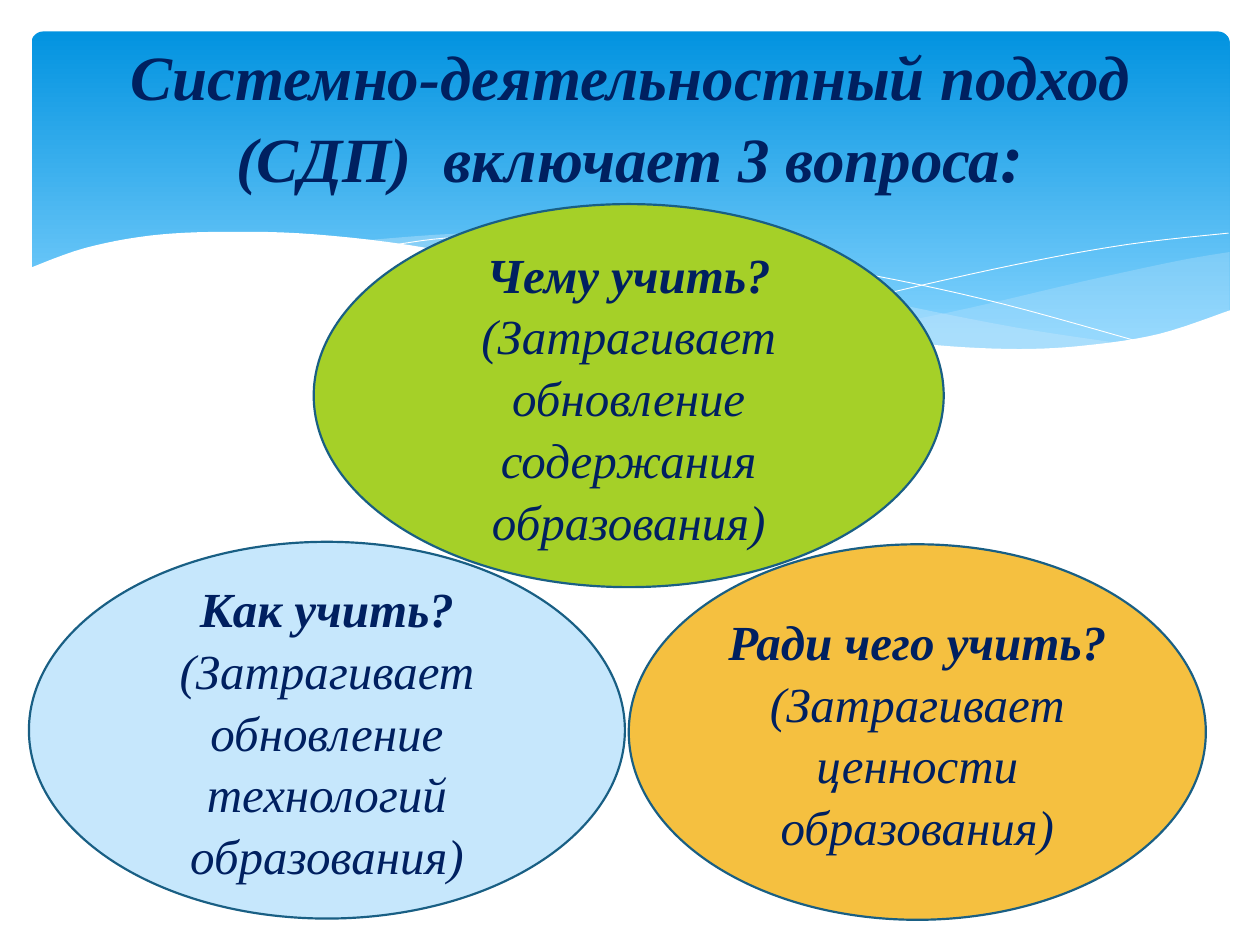
from dataclasses import dataclass

from lxml.etree import SubElement
from pptx import Presentation
from pptx.dml.color import RGBColor
from pptx.enum.shapes import MSO_SHAPE
from pptx.enum.text import MSO_ANCHOR, MSO_AUTO_SIZE, PP_ALIGN
from pptx.oxml.ns import qn
from pptx.util import Inches, Pt


@dataclass(frozen=True)
class Theme:
    font: str = "Times New Roman"
    ink: str = "002060"
    outline: str = "195F84"
    sky_top: str = "0293E0"
    sky_bottom: str = "83D3FE"
    mist: str = "C6E7FC"
    white: str = "FFFFFF"
    green: str = "A5D028"
    amber: str = "F5C040"
    title_size: float = 36
    colon_size: float = 39.6
    body_size: float = 28


def smooth(points, steps=6):
    """Sample a Catmull-Rom curve through the points."""
    padded = [points[0], *points, points[-1]]
    curve = [points[0]]
    for a, b, c, d in zip(padded, padded[1:], padded[2:], padded[3:]):
        for step in range(1, steps + 1):
            t = step / steps
            curve.append(tuple(
                0.5 * (2 * q + (r - p) * t + (2 * p - 5 * q + 4 * r - s) * t**2
                       + (3 * q - p - 3 * r + s) * t**3)
                for p, q, r, s in zip(a, b, c, d)))
    return curve


class SlideBuilder:
    def __init__(self, page, theme):
        self.page = page
        self.theme = theme

    def fill(self, shape, color, alpha=100):
        shape.fill.solid()
        shape.fill.fore_color.rgb = RGBColor.from_string(color)
        if alpha < 100:
            tint = shape.fill._xPr.find(qn("a:solidFill"))[0]
            SubElement(tint, qn("a:alpha"), val=str(alpha * 1000))

    def sky(self, left, top, width, height):
        shape = self.page.shapes.add_shape(
            MSO_SHAPE.ROUNDED_RECTANGLE,
            Inches(left), Inches(top), Inches(width), Inches(height))
        shape.adjustments[0] = 0.034
        shape.shadow.inherit = False
        shape.line.fill.background()
        shape.fill.gradient()
        shape.fill.gradient_angle = 270
        stops = ((0, self.theme.sky_top), (0.9, self.theme.sky_bottom))
        for stop, (position, color) in zip(shape.fill.gradient_stops, stops):
            stop.position = position
            stop.color.rgb = RGBColor.from_string(color)

    def outline(self, points, close):
        corners = [(Inches(x), Inches(y)) for x, y in points]
        builder = self.page.shapes.build_freeform(*corners[0])
        builder.add_line_segments(corners[1:], close=close)
        shape = builder.convert_to_shape()
        shape.shadow.inherit = False
        return shape

    def wave(self, points, color, alpha=100):
        shape = self.outline(points, close=True)
        self.fill(shape, color, alpha)
        shape.line.fill.background()

    def thread(self, points):
        shape = self.outline(smooth(points), close=False)
        shape.fill.background()
        shape.line.color.rgb = RGBColor.from_string(self.theme.white)
        shape.line.width = Pt(0.5)

    def style(self, font, size):
        font.name = self.theme.font
        font.size = Pt(size)
        font.italic = True
        font.color.rgb = RGBColor.from_string(self.theme.ink)

    def title(self, text, ending, left, top, width, height):
        box = self.page.shapes.title
        box.left, box.top = Inches(left), Inches(top)
        box.width, box.height = Inches(width), Inches(height)
        # Lift the title above the ellipses
        self.page.shapes._spTree.append(box._element)
        frame = box.text_frame
        frame.word_wrap = True
        frame.auto_size = MSO_AUTO_SIZE.NONE
        frame.vertical_anchor = MSO_ANCHOR.MIDDLE
        frame.margin_top, frame.margin_bottom = 0, Inches(0.6)
        para = frame.paragraphs[0]
        para.alignment = PP_ALIGN.CENTER
        self.style(para.font, self.theme.title_size)
        para.font.bold = True
        para.add_run().text = text
        span = para.add_run()
        span.text = ending
        span.font.size = Pt(self.theme.colon_size)

    def question(self, heading, detail, color, left, top, width, height):
        shape = self.page.shapes.add_shape(
            MSO_SHAPE.OVAL,
            Inches(left), Inches(top), Inches(width), Inches(height))
        shape.shadow.inherit = False
        self.fill(shape, color)
        shape.line.color.rgb = RGBColor.from_string(self.theme.outline)
        shape.line.width = Pt(1.25)
        frame = shape.text_frame
        frame.word_wrap = True
        frame.vertical_anchor = MSO_ANCHOR.MIDDLE
        para = frame.paragraphs[0]
        para.alignment = PP_ALIGN.CENTER
        para.line_spacing = 1.05
        self.style(para.font, self.theme.body_size)
        for text, bold in ((heading + " ", True), (detail, False)):
            span = para.add_run()
            span.text = text
            span.font.bold = bold


def main():
    deck = Presentation()
    deck.slide_width, deck.slide_height = Inches(10), Inches(7.5)
    theme = Theme()
    page = deck.slides.add_slide(deck.slide_layouts[5])
    slide = SlideBuilder(page, theme)

    # Sky with translucent waves
    slide.sky(0.25, 0.25, 9.51, 2.7)
    right_top = [(9.76, 2), (9.35, 2.07), (8.61, 2.23), (7.53, 2.48), (6.61, 2.65)]
    right_bottom = [(6.61, 2.65), (7.32, 2.74), (8.14, 2.78), (8.81, 2.73),
                    (9.35, 2.62), (9.76, 2.47)]
    slide.wave(smooth(right_top) + smooth(right_bottom), theme.mist, 29)
    middle_top = [(8.93, 2.73), (8.07, 2.6), (7.06, 2.4), (6.29, 2.22), (5.41, 2.03),
                  (4.65, 1.91), (3.8, 1.85), (2.86, 1.91)]
    middle_bottom = [(2.86, 1.91), (3.62, 2.03), (4.49, 2.22), (5.66, 2.48),
                     (6.8, 2.68), (7.61, 2.77), (8.28, 2.78), (8.93, 2.73)]
    slide.wave(smooth(middle_top) + smooth(middle_bottom), theme.mist, 40)

    # Thin crossing threads
    slide.thread([(3.09, 1.95), (3.53, 1.89), (4.16, 1.87), (4.89, 1.9), (5.82, 2),
                  (6.95, 2.19), (7.95, 2.41), (9.07, 2.72)])
    slide.thread([(6.13, 2.57), (6.95, 2.35), (8.06, 2.1), (8.95, 1.94), (9.75, 1.85)])

    # White wave that closes the sky
    crest = [(9.77, 2.46), (9.2, 2.65), (8.63, 2.74), (8.09, 2.77), (7.44, 2.74),
             (6.68, 2.65), (5.79, 2.5), (4.47, 2.2), (3.4, 1.97), (2.5, 1.86),
             (1.77, 1.84), (1.19, 1.87), (0.67, 1.97), (0.23, 2.13)]
    slide.wave(smooth(crest) + [(0.23, 3.29), (9.77, 3.29)], theme.white)

    # Title and the three questions
    slide.title("Системно-деятельностный подход (СДП)  включает 3 вопроса", ":",
                0.5, 0.52, 9, 1.42)
    slide.question("Чему учить?", "(Затрагивает обновление содержания образования)",
                   theme.green, 2.49, 1.62, 5, 3.04)
    slide.question("Как учить?", "(Затрагивает обновление технологий образования)",
                   theme.mist, 0.23, 4.3, 4.73, 2.99)
    slide.question("Ради чего учить?", "(Затрагивает ценности образования)",
                   theme.amber, 4.99, 4.32, 4.58, 2.98)

    deck.save("out.pptx")


if __name__ == "__main__":
    main()
